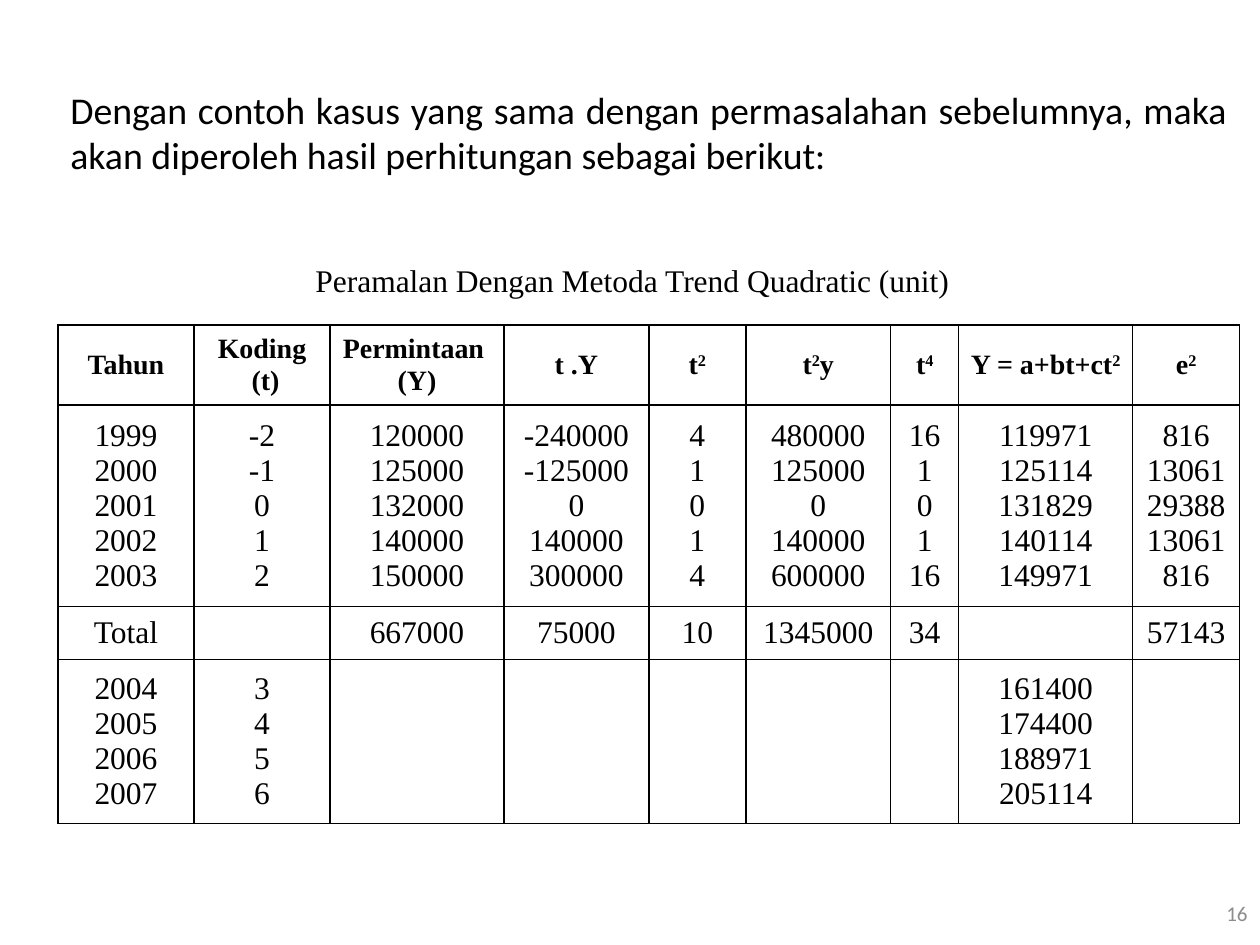
from lxml.etree import SubElement
from pptx import Presentation
from pptx.dml.color import RGBColor as RGB
from pptx.enum.text import MSO_ANCHOR as Anchor, PP_ALIGN as Align
from pptx.oxml.ns import qn
from pptx.util import Inches, Pt

COLORS = {"ink": "000000", "page": "8C8C8C"}
SERIF = "Times New Roman"


def write(frame, lines, align, color="ink", **style):
    """Fill a text frame; the character after each ^ is raised."""
    for i, line in enumerate(lines):
        para = frame.paragraphs[0] if i == 0 else frame.add_paragraph()
        para.alignment = align
        base, *raised = line.split("^")
        parts = [(base, False)]
        for part in raised:
            parts += [(part[0], True), (part[1:], False)]
        for text, high in parts:
            if not text:
                continue
            run = para.add_run()
            run.text = text
            for key, value in style.items():
                setattr(run.font, key, value)
            run.font.color.rgb = RGB.from_string(COLORS[color])
            if high:
                run._r.get_or_add_rPr().set("baseline", "30000")


def border(cell):
    """Draw a thin line on all four sides of a cell."""
    props = cell._tc.get_or_add_tcPr()
    for i, side in enumerate(("lnL", "lnR", "lnT", "lnB")):
        line = props.makeelement(qn(f"a:{side}"), {"w": str(Pt(1))})
        fill = SubElement(line, qn("a:solidFill"))
        SubElement(fill, qn("a:srgbClr"), val=COLORS["ink"])
        props.insert(i, line)


deck = Presentation()
deck.slide_width, deck.slide_height = Inches(10), Inches(7.5)
slide = deck.slides.add_slide(deck.slide_layouts[6])

intro = ("Dengan contoh kasus yang sama dengan permasalahan sebelumnya, maka "
         "akan diperoleh hasil perhitungan sebagai berikut:")
caption = "Peramalan Dengan Metoda Trend Quadratic (unit)"
texts = [
    (intro, (0.46, 0.42, 9.38, 1.25), Anchor.MIDDLE, Align.JUSTIFY,
     {"size": Pt(21.6), "name": "Calibri"}),
    (caption, (0.46, 2.02, 9.12, 0.45), Anchor.TOP, Align.CENTER,
     {"size": Pt(18), "name": SERIF}),
    ("16", (7.92, 7, 2.08, 0.5), Anchor.MIDDLE, Align.RIGHT,
     {"size": Pt(12), "name": "Calibri", "color": "page"}),
]
for text, place, anchor, align, style in texts:
    frame = slide.shapes.add_textbox(*map(Inches, place)).text_frame
    frame.word_wrap = True
    frame.vertical_anchor = anchor
    write(frame, [text], align, **style)

# Each column: width, heading, yearly values, total, forecasts
columns = [
    (1.08, "Tahun", "1999 2000 2001 2002 2003", "Total", "2004 2005 2006 2007"),
    (1.08, "Koding\n (t)", "-2 -1 0 1 2", "", "3 4 5 6"),
    (1.38, "Permintaan \n(Y)", "120000 125000 132000 140000 150000", "667000", ""),
    (1.15, "t .Y", "-240000 -125000 0 140000 300000", "75000", ""),
    (0.77, "t^2", "4 1 0 1 4", "10", ""),
    (1.15, "t^2y", "480000 125000 0 140000 600000", "1345000", ""),
    (0.54, "t^4", "16 1 0 1 16", "34", ""),
    (1.38, "Y = a+bt+ct^2", "119971 125114 131829 140114 149971", "",
     "161400 174400 188971 205114"),
    (0.85, "e^2", "816 13061 29388 13061 816", "57143", ""),
]
heights = [0.6, 1.48, 0.42, 1.21]
table = slide.shapes.add_table(
    len(heights), len(columns), Inches(0.46), Inches(2.58),
    Inches(9.38), Inches(sum(heights))).table
table.first_row = table.horz_banding = False
for row, height in zip(table.rows, heights):
    row.height = Inches(height)

for c, (width, head, *body) in enumerate(columns):
    table.columns[c].width = Inches(width)
    for r, lines in enumerate([head.split("\n")] + [b.split() for b in body]):
        cell = table.cell(r, c)
        cell.fill.background()
        cell.vertical_anchor = Anchor.MIDDLE
        cell.margin_left = cell.margin_right = Inches(0.09)
        cell.margin_top = cell.margin_bottom = Inches(0.05)
        border(cell)
        write(cell.text_frame, lines, Align.CENTER, name=SERIF,
              size=Pt(18 if r else 16), bold=r == 0)

deck.save("out.pptx")
